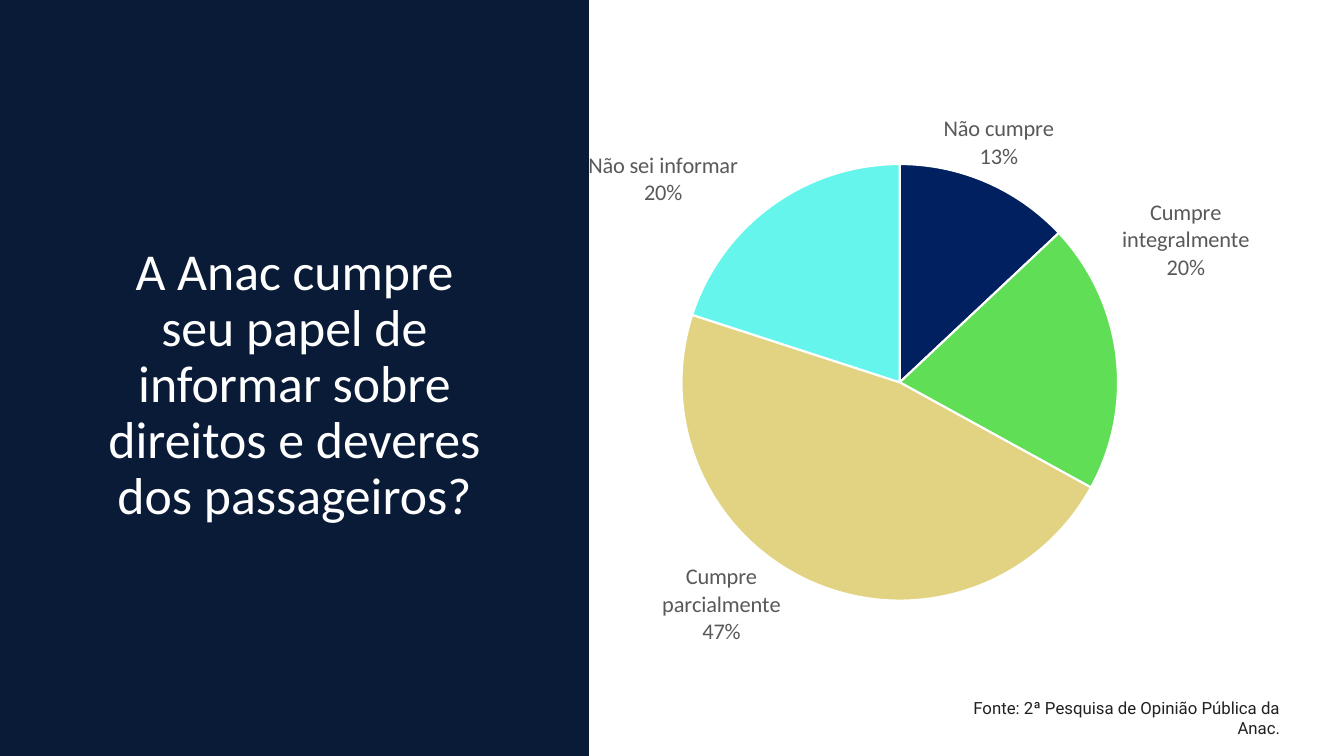
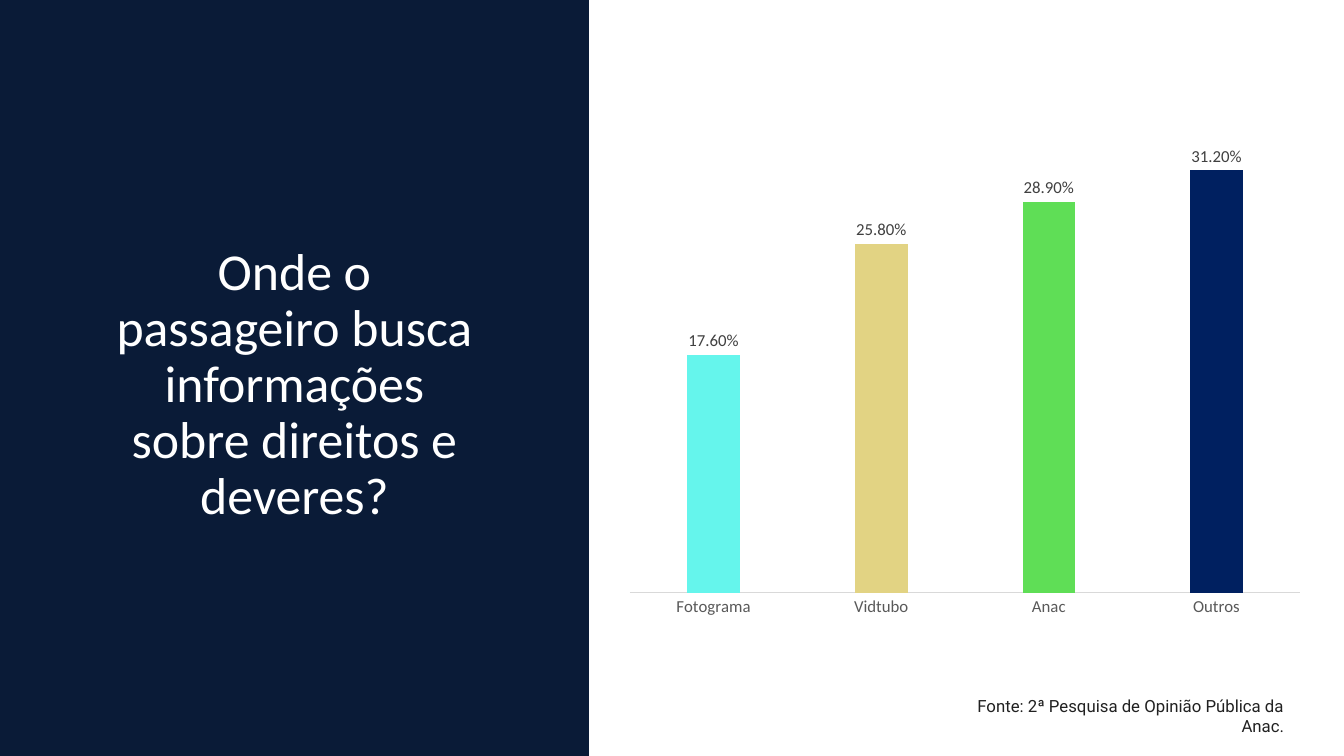
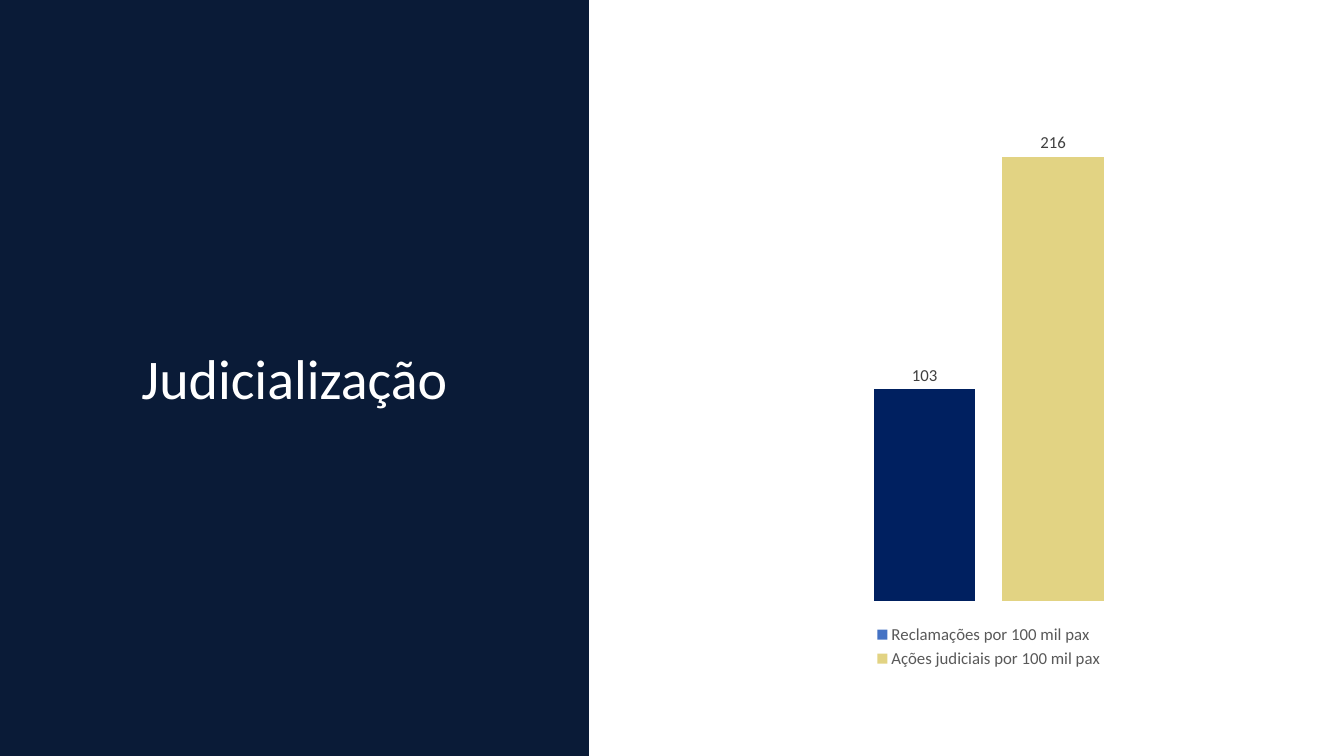
import copy
import pptx
import pptx.chart.data
import pptx.dml.color
import pptx.enum.chart
import pptx.enum.shapes
import pptx.enum.text
import pptx.oxml
import pptx.oxml.ns
import pptx.util

Cm = pptx.util.Cm
Pt = pptx.util.Pt
Kind = pptx.enum.chart.XL_CHART_TYPE
Place = pptx.enum.chart.XL_LABEL_POSITION
Align = pptx.enum.text.PP_ALIGN

WIDE, HIGH = 33.87, 19.05
PANEL = (0, 0, 14.84, HIGH)
NIGHT, WHITE, INK = "0A1B37", "FFFFFF", "212121"
NAVY, GREEN, SAND, AQUA, BLUE = "002060", "5FDE56", "E2D383", "65F5EC", "4472C4"
GREY, DARK, RULE = "595959", "404040", "D9D9D9"
SOURCE = "Fonte: 2ª Pesquisa de Opinião Pública da Anac."
SPACE = pptx.oxml.ns.nsdecls("c")


def tint(code):
    return pptx.dml.color.RGBColor.from_string(code)


def paint(item, code):
    item.fill.solid()
    item.fill.fore_color.rgb = tint(code)


def style(font, size, code, name="Calibri"):
    font.name = name
    font.size = Pt(size)
    font.color.rgb = tint(code)


def write(slide, box, words, size, code, name, align):
    frame = slide.shapes.add_textbox(*map(Cm, box)).text_frame
    frame.word_wrap = True
    line = frame.paragraphs[0]
    line.text = words
    line.alignment = align
    style(line.font, size, code, name)
    return frame


def panel(slide, box, title, size, tall):
    left, top, width, height = box
    band = slide.shapes.add_shape(
        pptx.enum.shapes.MSO_SHAPE.RECTANGLE, *map(Cm, box))
    band.shadow.inherit = False
    paint(band, NIGHT)
    band.line.fill.background()
    spot = (left + 2.41, top + (height - tall) / 2, width - 4.82, tall)
    frame = write(slide, spot, title, size, WHITE, "Calibri", Align.CENTER)
    frame.vertical_anchor = pptx.enum.text.MSO_ANCHOR.BOTTOM
    frame.paragraphs[0].line_spacing = 0.9


def source(slide, left, top):
    write(slide, (left, top, 9.32, 0.76), SOURCE, 12, INK, "Roboto", Align.RIGHT)


def graph(slide, box, kind, cats, rows, form="General"):
    data = pptx.chart.data.CategoryChartData(number_format=form)
    data.categories = cats
    for name, vals in rows:
        data.add_series(name, vals)
    chart = slide.shapes.add_chart(kind, *map(Cm, box), data).chart
    style(chart.font, 10, "000000")
    chart.has_title = False
    chart.has_legend = False
    return chart


def label(row, size, code, form):
    tags = row.data_labels
    style(tags.font, size, code)
    tags.number_format = form
    tags.number_format_is_linked = False
    tags.position = Place.OUTSIDE_END
    return tags


def layout(**parts):
    rows = "".join(f'<c:{key} val="{val}"/>' for key, val in parts.items())
    return pptx.oxml.parse_xml(
        f"<c:layout {SPACE}><c:manualLayout>{rows}</c:manualLayout></c:layout>")


def shift(row, spot, across, down):
    row.points[spot].data_label.position = Place.OUTSIDE_END
    tags = row.data_labels._element
    tag = tags.xpath(f"c:dLbl[c:idx/@val='{spot}']")[0]
    for part in tag.xpath("*[not(self::c:idx)]"):
        tag.remove(part)
    tag.append(layout(x=across, y=down))
    for part in tags.xpath("*[not(self::c:dLbl or self::c:showLeaderLines)]"):
        tag.append(copy.deepcopy(part))


def pie(slide, box):
    cats = ["Não cumpre", "Cumpre integralmente",
            "Cumpre parcialmente", "Não sei informar"]
    chart = graph(slide, box, Kind.PIE, cats, [("Series 1", [13, 20, 47, 20])])
    plot = chart.plots[0]
    plot.vary_by_categories = True
    row = plot.series[0]
    for spot, code in enumerate([NAVY, GREEN, SAND, AQUA]):
        wedge = row.points[spot].format
        paint(wedge, code)
        wedge.line.color.rgb = tint(WHITE)
        wedge.line.width = Pt(1.5)
    tags = label(row, 16, GREY, "0%")
    tags.show_value = False
    tags.show_category_name = True
    tags.show_percentage = True
    root = tags._element
    for old in root.xpath("c:showLeaderLines"):
        root.remove(old)
    for part in (f"<c:separator {SPACE}>\n</c:separator>",
                 f'<c:showLeaderLines {SPACE} val="0"/>'):
        root.append(pptx.oxml.parse_xml(part))
    moves = [(-0.06, -0.01), (0, -0.12), (-0.04, -0.04), (-0.04, 0.01)]
    for spot, move in enumerate(moves):
        shift(row, spot, *move)
    area = chart._chartSpace.xpath("c:chart/c:plotArea")[0]
    for old in area.xpath("c:layout"):
        area.remove(old)
    area.insert(0, layout(layoutTarget="inner", xMode="edge", yMode="edge",
                          x=0.15, y=0.13, w=0.58, h=0.72))


def bars(slide, box, cats, rows, codes, form):
    chart = graph(slide, box, Kind.COLUMN_CLUSTERED, cats, rows, form)
    plot = chart.plots[0]
    plot.vary_by_categories = False
    plot.gap_width = 219
    plot.overlap = -27
    chart.value_axis.has_major_gridlines = False
    chart.value_axis.visible = False
    for row, code in zip(plot.series, codes):
        paint(row.format, code)
        row.invert_if_negative = False
        label(row, 12, DARK, form).show_value = True
    return chart


def search(slide, box):
    cats = ["Fotograma", "Vidtubo", "Anac", "Outros"]
    vals = [0.176, 0.258, 0.289, 0.312]
    chart = bars(slide, box, cats, [("Series 1", vals)], [AQUA], "0.00%")
    for spot, code in enumerate([SAND, GREEN, NAVY], 1):
        paint(chart.plots[0].series[0].points[spot].format, code)
    axis = chart.category_axis
    axis.major_tick_mark = pptx.enum.chart.XL_TICK_MARK.NONE
    style(axis.tick_labels.font, 12, GREY)
    axis.format.line.color.rgb = tint(RULE)
    axis.format.line.width = Pt(0.75)


def courts(slide, box):
    rows = [("Reclamações por 100 mil pax", [103]),
            ("Ações judiciais por 100 mil pax", [216])]
    chart = bars(slide, box, ["1"], rows, [BLUE, SAND], "General")
    paint(chart.plots[0].series[0].points[0].format, NAVY)
    chart.category_axis.visible = False
    chart.has_legend = True
    chart.legend.position = pptx.enum.chart.XL_LEGEND_POSITION.BOTTOM
    chart.legend.include_in_layout = False
    style(chart.legend.font, 12, GREY)


def main():
    deck = pptx.Presentation()
    deck.slide_width, deck.slide_height = Cm(WIDE), Cm(HIGH)
    pages = [
        ("A Anac cumpre seu papel de informar sobre direitos e deveres "
         "dos passageiros?", 37, 7.67, pie, (14.33, 2.13, 18.97, 15.32),
         (23.19, 17.46)),
        ("Onde o passageiro busca informações sobre direitos e deveres?",
         37, 7.67, search, (15.52, 2.74, 17.6, 13.06), (23.29, 17.4)),
        ("Judicialização", 40, 1.93, courts, (19, 1.89, 11.84, 15.06), None),
    ]
    for title, size, tall, draw, box, note in pages:
        slide = deck.slides.add_slide(deck.slide_layouts[6])
        panel(slide, PANEL, title, size, tall)
        draw(slide, box)
        if note:
            source(slide, *note)
    deck.save("out.pptx")


if __name__ == "__main__":
    main()
